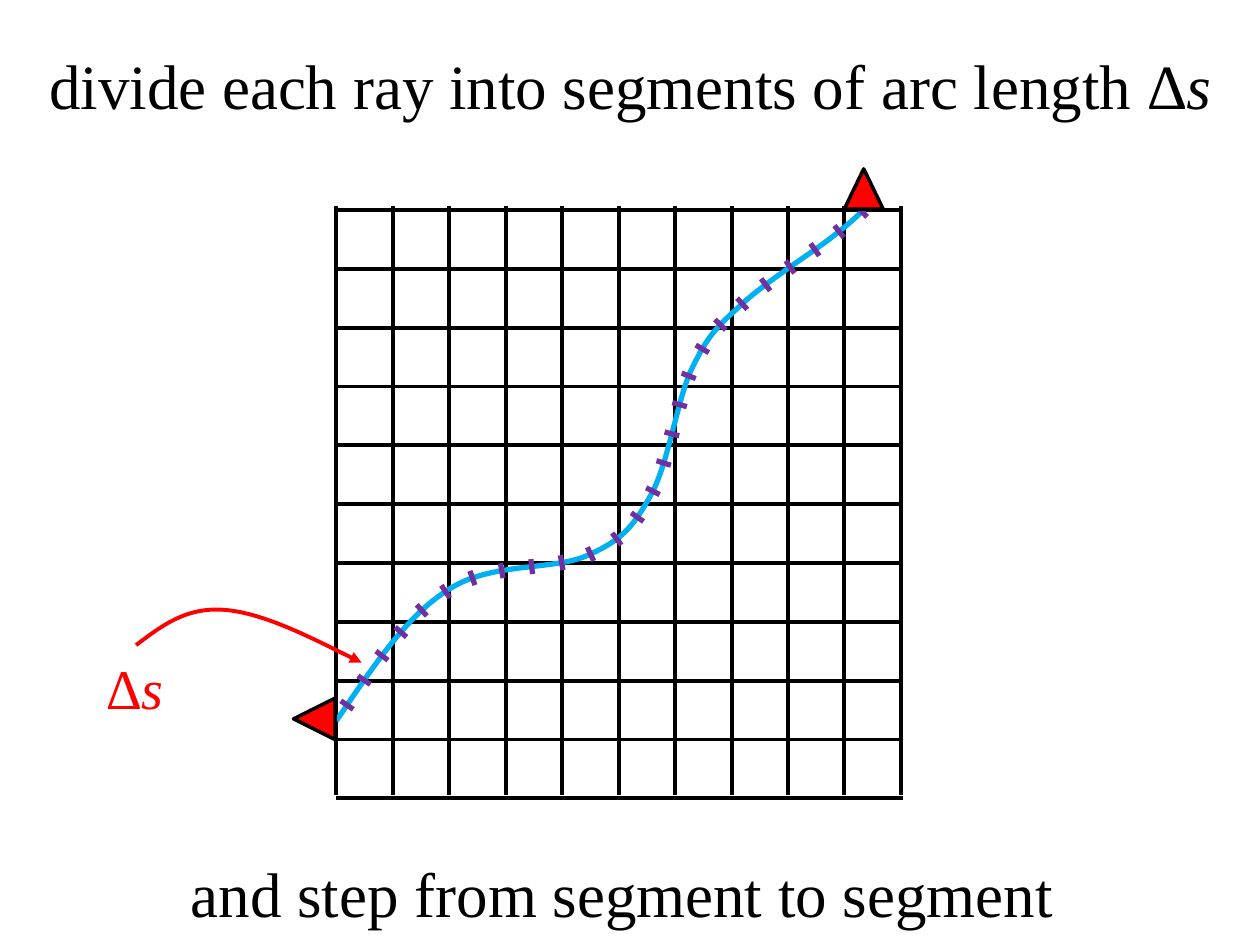
from itertools import pairwise
from math import hypot

from lxml.etree import SubElement
from pptx import Presentation
from pptx.dml.color import RGBColor
from pptx.enum.shapes import MSO_CONNECTOR as Connector, MSO_SHAPE as Shape
from pptx.enum.text import MSO_ANCHOR as Anchor, PP_ALIGN as Align
from pptx.oxml.ns import qn
from pptx.util import Inches, Pt

BLACK = RGBColor(0x00, 0x00, 0x00)
RED = RGBColor(0xFF, 0x00, 0x00)
SKY = RGBColor(0x00, 0xB0, 0xF0)
PURPLE = RGBColor(0x70, 0x30, 0xA0)
FONT = "Times New Roman"

WIDTH, HEIGHT = 10, 7.5
BAND = HEIGHT / 9
CELLS = 10
GRID_LEFT, GRID_TOP = 2.67, HEIGHT / 4.5
COLUMN, ROW = 4.48 / CELLS, 4.67 / CELLS
OVERHANG = 0.03

RAY = [
    (2.67, 5.72), (2.95, 5.31), (3.22, 4.89), (3.56, 4.68),
    (3.89, 4.46), (4.39, 4.53), (4.66, 4.41),
    (4.93, 4.29), (5.02, 4.19), (5.16, 3.94),
    (5.3, 3.7), (5.37, 3.2), (5.48, 2.95),
    (5.6, 2.7), (5.66, 2.62), (5.85, 2.45),
    (6.03, 2.27), (6.41, 2.03), (6.58, 1.9),
    (6.75, 1.77), (6.81, 1.71), (6.87, 1.65),
]
POINTER = [(1.08, 5.12), (1.28, 4.97), (1.47, 4.82), (1.77, 4.84),
           (2.07, 4.86), (2.47, 5.06), (2.87, 5.26)]
FIRST_STEP, STEP, TICK_COUNT, TICK_LENGTH = 0.15, 0.24, 26, 0.12


def style_line(line, color, weight):
    line.color.rgb = color
    line.width = Pt(weight)


def add_line(shapes, start, end, color, weight):
    line = shapes.add_connector(
        Connector.STRAIGHT, *(Inches(length) for length in (*start, *end)))
    style_line(line.line, color, weight)
    SubElement(line._element.spPr, qn("a:effectLst"))


def add_grid(slide):
    grid = slide.shapes.add_group_shape().shapes
    right = GRID_LEFT + CELLS * COLUMN + OVERHANG / 2
    top = GRID_TOP - OVERHANG
    for index in range(CELLS + 1):
        y = GRID_TOP + index * ROW
        add_line(grid, (GRID_LEFT, y), (right, y), BLACK, 2.25)
    for index in range(CELLS + 1):
        x = GRID_LEFT + index * COLUMN
        add_line(grid, (x, top), (x, top + CELLS * ROW), BLACK, 2.25)


def add_curve(slide, points, color, weight):
    start, *controls = [(Inches(x), Inches(y)) for x, y in points]
    builder = slide.shapes.build_freeform(*start)
    builder.add_line_segments(controls, close=False)
    curve = builder.convert_to_shape()
    outline = curve._element.find(".//" + qn("a:path"))
    corners = outline.findall(qn("a:lnTo"))
    for first in range(0, len(corners), 3):
        bend = SubElement(outline, qn("a:cubicBezTo"))
        for corner in corners[first:first + 3]:
            bend.append(corner[0])
            outline.remove(corner)
    curve.fill.background()
    curve.shadow.inherit = False
    style_line(curve.line, color, weight)
    return curve


def flatten(points, pieces=50):
    flat = [points[0]]
    for first in range(0, len(points) - 1, 3):
        controls = points[first:first + 4]
        for piece in range(1, pieces + 1):
            t = piece / pieces
            weights = ((1 - t) ** 3, 3 * t * (1 - t) ** 2,
                       3 * t ** 2 * (1 - t), t ** 3)
            flat.append(tuple(
                sum(w * value for w, value in zip(weights, axis))
                for axis in zip(*controls)))
    return flat


def add_ticks(slide):
    travelled, placed = 0, 0
    half = TICK_LENGTH / 2
    for (x, y), (next_x, next_y) in pairwise(flatten(RAY)):
        dx, dy = next_x - x, next_y - y
        piece = hypot(dx, dy)
        target = FIRST_STEP + placed * STEP
        if placed < TICK_COUNT and travelled + piece >= target:
            share = (target - travelled) / piece
            center_x, center_y = x + share * dx, y + share * dy
            across, down = -dy / piece * half, dx / piece * half
            add_line(slide.shapes, (center_x - across, center_y - down),
                     (center_x + across, center_y + down), PURPLE, 3)
            placed += 1
        travelled += piece


def add_marker(slide, left, top, width, height, rotation=0):
    marker = slide.shapes.add_shape(
        Shape.ISOSCELES_TRIANGLE,
        *(Inches(length) for length in (left, top, width, height)))
    marker.rotation = rotation
    marker.fill.solid()
    marker.fill.fore_color.rgb = RED
    marker.shadow.inherit = False
    style_line(marker.line, BLACK, 2)


def add_pointer(slide):
    pointer = add_curve(slide, POINTER, RED, 2.25)
    SubElement(pointer.line._get_or_add_ln(), qn("a:tailEnd"), type="triangle")


def write_text(holder, runs, size, color, align, anchor):
    frame = holder.text_frame
    frame.word_wrap = True
    frame.vertical_anchor = anchor
    paragraph = frame.paragraphs[0]
    paragraph.alignment = align
    for words, italic in runs:
        run = paragraph.add_run()
        run.text = words
        run.font.name = FONT
        run.font.size = Pt(size)
        run.font.italic = italic
        run.font.color.rgb = color


def add_title(slide):
    title = slide.shapes.title
    title.left, title.top = Inches(0), Inches(HEIGHT / 30)
    title.width, title.height = Inches(WIDTH), Inches(BAND)
    runs = [("divide each ray into segments of arc length ", False),
            ("∆s", True)]
    write_text(title, runs, 36, BLACK, Align.CENTER, Anchor.MIDDLE)


def add_text(slide, box, runs, size, color, align, anchor):
    holder = slide.shapes.add_textbox(*(Inches(length) for length in box))
    write_text(holder, runs, size, color, align, anchor)


def main():
    deck = Presentation()
    deck.slide_width, deck.slide_height = Inches(WIDTH), Inches(HEIGHT)
    slide = deck.slides.add_slide(deck.slide_layouts[5])
    add_title(slide)
    add_grid(slide)
    add_curve(slide, RAY, SKY, 3)
    add_ticks(slide)
    add_marker(slide, 2.33, 5.54, 0.33, 0.33, rotation=270)
    add_marker(slide, 6.7, 1.34, 0.31, 0.32)
    add_pointer(slide)
    add_text(slide, (0.75, 5.14, 0.75, 0.64), [("∆s", True)],
             32, RED, Align.LEFT, Anchor.TOP)
    add_text(slide, (0, HEIGHT - BAND, WIDTH, BAND),
             [("and step from segment to segment ", False)],
             36, BLACK, Align.CENTER, Anchor.MIDDLE)
    deck.save("out.pptx")


if __name__ == "__main__":
    main()
